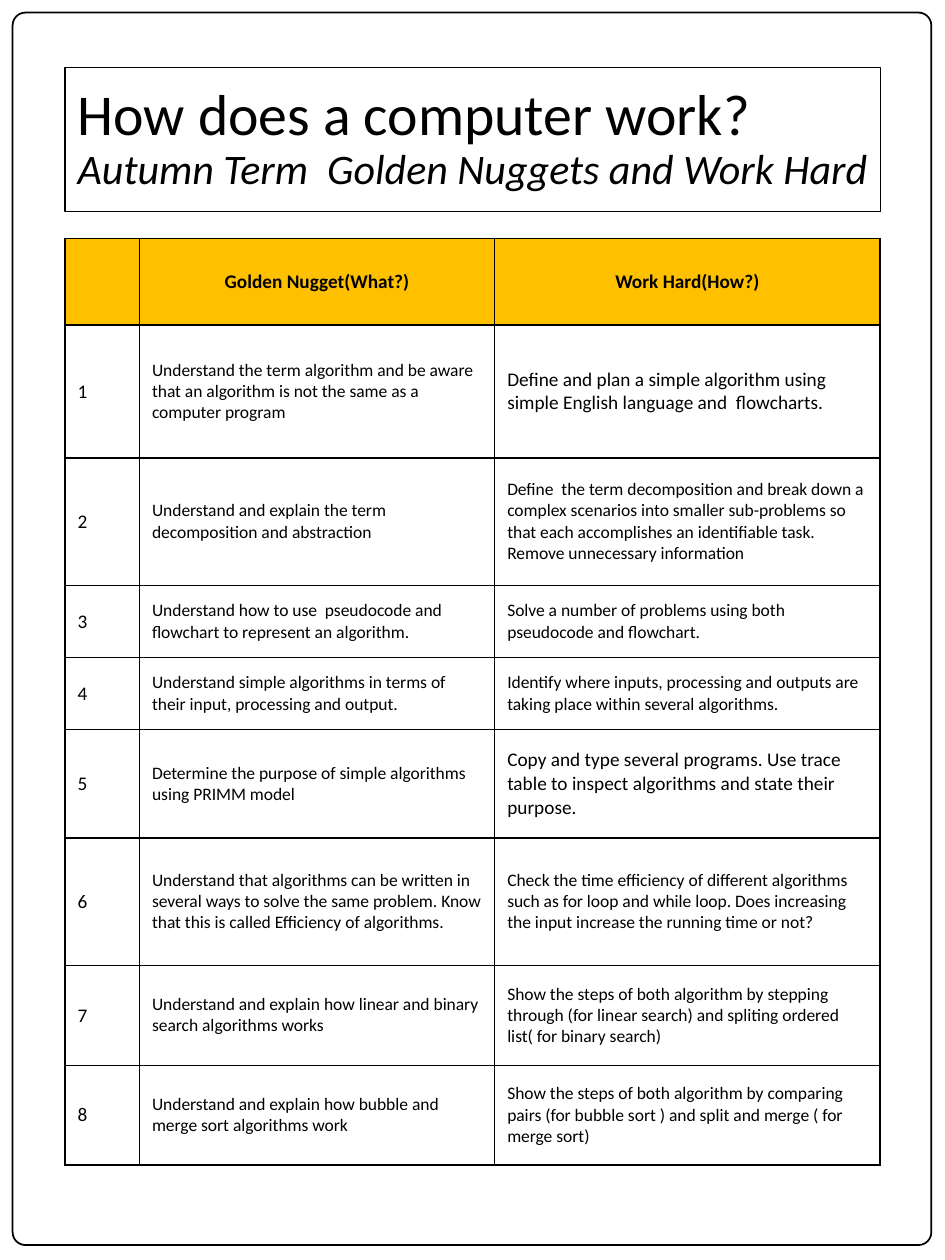
from dataclasses import dataclass

from lxml import etree
from pptx import Presentation
from pptx.dml.color import RGBColor
from pptx.enum.shapes import MSO_SHAPE
from pptx.enum.text import MSO_ANCHOR, MSO_AUTO_SIZE, PP_ALIGN
from pptx.oxml.ns import qn
from pptx.util import Pt

ROUNDED = MSO_SHAPE.ROUNDED_RECTANGLE
MIDDLE = MSO_ANCHOR.MIDDLE
NO_AUTOFIT = MSO_AUTO_SIZE.NONE
LEFT, CENTER = PP_ALIGN.LEFT, PP_ALIGN.CENTER
TITLE_ONLY = 5


@dataclass(frozen=True)
class Theme:
    font: str = "Calibri"
    ink: RGBColor = RGBColor(0x00, 0x00, 0x00)
    paper: RGBColor = RGBColor(0xFF, 0xFF, 0xFF)
    gold: RGBColor = RGBColor(0xFF, 0xC0, 0x00)
    title: float = 33
    subtitle: float = 24
    large: float = 11
    small: float = 10


THEME = Theme()
MARGIN = 37.2
COLUMN_WIDTHS = [42.5, 203, 220.3]
ROW_HEIGHTS = [49.5, 75.8, 73, 41.2, 41.2, 61.8, 73, 57, 57]
CONTENT_WIDTH = sum(COLUMN_WIDTHS)
HEADINGS = ["", "Golden Nugget(What?)", "Work Hard(How?)"]
LESSONS = [
    ("Understand the term algorithm and be aware that an algorithm is not the same as a computer program",
     "Define and plan a simple algorithm using simple English language and  flowcharts.", THEME.large),
    ("Understand and explain the term decomposition and abstraction",
     "Define  the term decomposition and break down a complex scenarios into smaller sub-problems "
     "so that each accomplishes an identifiable task.   Remove unnecessary information", THEME.small),
    ("Understand how to use  pseudocode and  flowchart to represent an algorithm.",
     "Solve a number of problems using both pseudocode and flowchart.", THEME.small),
    ("Understand simple algorithms in terms of their input, processing and output.",
     "Identify where inputs, processing and outputs are taking place within several algorithms.", THEME.small),
    ("Determine the purpose of simple algorithms using PRIMM model",
     "Copy and type several programs. Use trace table to inspect algorithms and state their purpose.",
     THEME.large),
    ("Understand that algorithms can be written in several ways to solve the same problem. "
     "Know that this is called Efficiency of algorithms.",
     "Check the time efficiency of different algorithms such as for loop and while loop. "
     "Does increasing the input increase the running time or not?", THEME.small),
    ("Understand and explain how linear and binary search algorithms works",
     "Show the steps of both algorithm by stepping through (for linear search) "
     "and spliting ordered list( for binary search)", THEME.small),
    ("Understand and explain how bubble and merge sort algorithms work",
     "Show the steps of both algorithm by comparing pairs (for bubble sort ) "
     "and split and merge ( for merge sort)", THEME.small),
]


def add_run(paragraph, text, size, bold=False, italic=False):
    run = paragraph.add_run()
    run.text = text
    font = run.font
    font.name, font.size = THEME.font, Pt(size)
    font.bold, font.italic = bold, italic
    font.color.rgb = THEME.ink


def add_title(slide):
    title = slide.shapes.title
    title.left, title.top = Pt(MARGIN), Pt(38.4)
    title.width, title.height = Pt(CONTENT_WIDTH), Pt(82.6)
    title.line.color.rgb = THEME.ink
    title.line.width = Pt(0.75)
    frame = title.text_frame
    frame.word_wrap = True
    frame.auto_size = NO_AUTOFIT
    frame.vertical_anchor = MIDDLE
    heading = frame.paragraphs[0]
    heading.alignment = LEFT
    heading.line_spacing = 0.9
    add_run(heading, "How does a computer work?", THEME.title)
    heading.add_line_break()
    add_run(heading, "Autumn Term  Golden Nuggets and Work Hard", THEME.subtitle, italic=True)


def add_borders(cell):
    properties = cell._tc.get_or_add_tcPr()
    for side in ("a:lnL", "a:lnR", "a:lnT", "a:lnB"):
        border = etree.SubElement(properties, qn(side), w=str(Pt(1)))
        fill = etree.SubElement(border, qn("a:solidFill"))
        etree.SubElement(fill, qn("a:srgbClr"), val=str(THEME.ink))


def fill_cell(cell, text, size, color=THEME.paper, bold=False, alignment=LEFT):
    add_borders(cell)
    cell.fill.solid()
    cell.fill.fore_color.rgb = color
    cell.vertical_anchor = MIDDLE
    paragraph = cell.text_frame.paragraphs[0]
    paragraph.alignment = alignment
    if text:
        add_run(paragraph, text, size, bold)


def add_lesson_table(slide):
    table = slide.shapes.add_table(
        len(ROW_HEIGHTS), len(COLUMN_WIDTHS), Pt(MARGIN), Pt(136.3),
        Pt(CONTENT_WIDTH), Pt(sum(ROW_HEIGHTS))).table
    table.first_row = table.horz_banding = False
    for column, width in zip(table.columns, COLUMN_WIDTHS):
        column.width = Pt(width)
    for row, height in zip(table.rows, ROW_HEIGHTS):
        row.height = Pt(height)
    for index, heading in enumerate(HEADINGS):
        fill_cell(table.cell(0, index), heading, THEME.large, THEME.gold, True, CENTER)
    for number, (nugget, task, task_size) in enumerate(LESSONS, 1):
        fill_cell(table.cell(number, 0), str(number), THEME.large)
        fill_cell(table.cell(number, 1), nugget, THEME.small)
        fill_cell(table.cell(number, 2), task, task_size)


def add_page_frame(slide):
    frame = slide.shapes.add_shape(ROUNDED, Pt(7.2), Pt(7.2), Pt(525), Pt(704.3))
    frame.adjustments[0] = 0.014
    frame.shadow.inherit = False
    frame.fill.background()
    frame.line.color.rgb = THEME.ink
    frame.line.width = Pt(1)


def main():
    presentation = Presentation()
    presentation.slide_width, presentation.slide_height = Pt(540), Pt(720)
    slide = presentation.slides.add_slide(presentation.slide_layouts[TITLE_ONLY])
    add_title(slide)
    add_lesson_table(slide)
    add_page_frame(slide)
    presentation.save("out.pptx")


if __name__ == "__main__":
    main()
